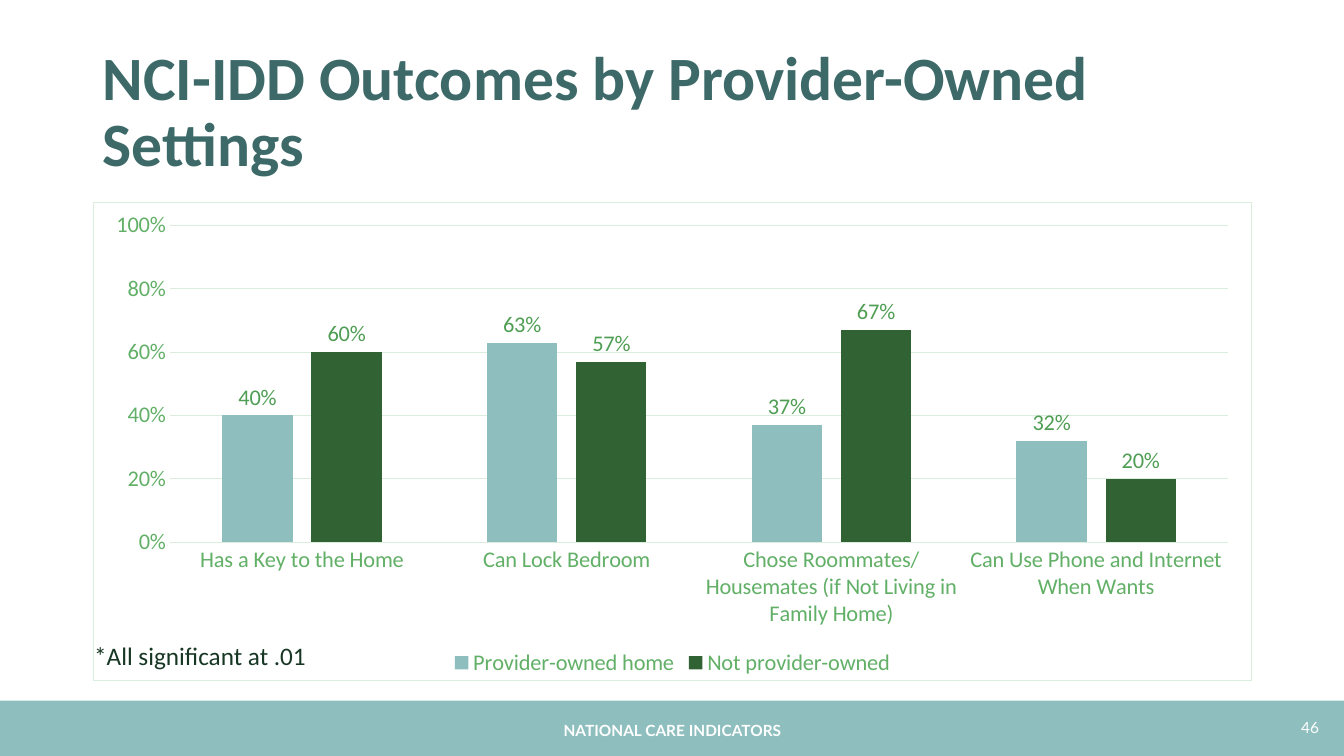
from dataclasses import dataclass

import lxml.etree
import pptx
import pptx.chart.data
import pptx.dml.color
import pptx.enum.chart
import pptx.enum.shapes
import pptx.enum.text
import pptx.oxml
import pptx.oxml.ns
import pptx.util

ALIGN = pptx.enum.text.PP_ALIGN
ANCHOR = pptx.enum.text.MSO_ANCHOR
WIDTH, HEIGHT = pptx.util.Inches(13.33), pptx.util.Inches(7.5)


@dataclass(frozen=True)
class Theme:
    teal: str = "8EBEBE"
    dark_teal: str = "3D6969"
    dark_green: str = "316234"
    label_green: str = "4F9E54"
    axis_green: str = "62B067"
    pale_green: str = "DBEDDC"
    ink: str = "173724"
    white: str = "FFFFFF"
    body_font: str = "Calibri"
    footer_font: str = "Lato"
    title_size: float = 44
    note_size: float = 18
    chart_size: float = 16
    footer_size: float = 11
    hairline: float = 0.75


THEME = Theme()


@dataclass(frozen=True)
class Area:
    """A rectangle in percent of the slide's width and height."""
    left: float
    top: float
    width: float
    height: float

    def box(self) -> tuple[int, int, int, int]:
        return (int(WIDTH * self.left / 100), int(HEIGHT * self.top / 100),
                int(WIDTH * self.width / 100), int(HEIGHT * self.height / 100))


@dataclass(frozen=True)
class Label:
    text: str
    area: Area
    align: ALIGN
    size: float
    font: str
    color: str
    bold: bool = False
    wrap: bool = True


@dataclass(frozen=True)
class Series:
    name: str
    values: tuple[float, ...]
    color: str


TITLE = "NCI-IDD Outcomes by Provider-Owned Settings"
TITLE_AREA = Area(6.9, 5.33, 86.27, 19.33)
CHART_AREA = Area(6.9, 26.67, 86.27, 63.47)
BAND_AREA = Area(0, 92.67, 100, 7.33)

CATEGORIES = (
    "Has a Key to the Home",
    "Can Lock Bedroom",
    "Chose Roommates/ Housemates (if Not Living in Family Home)",
    "Can Use Phone and Internet When Wants",
)
SERIES = (
    Series("Provider-owned home", (0.40, 0.63, 0.37, 0.32), THEME.teal),
    Series("Not provider-owned", (0.60, 0.57, 0.67, 0.20), THEME.dark_green),
)
LABELS = (
    Label("*All significant at .01", Area(6.15, 84, 17.48, 5.33), ALIGN.CENTER,
          THEME.note_size, THEME.body_font, THEME.ink, wrap=False),
    Label("46", Area(76.37, 94.27, 22.51, 5.33), ALIGN.RIGHT,
          THEME.footer_size, THEME.footer_font, THEME.white),
    Label("NATIONAL CARE INDICATORS", Area(33.16, 94.67, 33.76, 4.27), ALIGN.CENTER,
          THEME.footer_size, THEME.footer_font, THEME.white, bold=True),
)


def rgb(color: str) -> pptx.dml.color.RGBColor:
    return pptx.dml.color.RGBColor.from_string(color)


def apply(target, values: dict) -> None:
    for name, value in values.items():
        setattr(target, name, value)


def format_font(font, size: float, color: str, name: str = THEME.body_font,
                bold: bool = False) -> None:
    apply(font, {"size": pptx.util.Pt(size), "name": name, "bold": bold})
    font.color.rgb = rgb(color)


def format_line(line, color: str) -> None:
    line.color.rgb = rgb(color)
    line.width = pptx.util.Pt(THEME.hairline)


def add_band(slide) -> None:
    band = slide.shapes.add_shape(pptx.enum.shapes.MSO_SHAPE.RECTANGLE, *BAND_AREA.box())
    band.shadow.inherit = False
    band.fill.solid()
    band.fill.fore_color.rgb = rgb(THEME.teal)
    band.line.fill.background()


def set_title(slide) -> None:
    title = slide.shapes.title
    apply(title, dict(zip(("left", "top", "width", "height"), TITLE_AREA.box())))
    frame = title.text_frame
    frame.text = TITLE
    apply(frame, {"word_wrap": True, "vertical_anchor": ANCHOR.MIDDLE,
                  "auto_size": pptx.enum.text.MSO_AUTO_SIZE.NONE})
    paragraph = frame.paragraphs[0]
    apply(paragraph, {"alignment": ALIGN.LEFT, "line_spacing": 0.9})
    format_font(paragraph.runs[0].font, THEME.title_size, THEME.dark_teal, bold=True)


def add_label(slide, label: Label) -> None:
    frame = slide.shapes.add_textbox(*label.area.box()).text_frame
    frame.word_wrap = label.wrap
    paragraph = frame.paragraphs[0]
    paragraph.text = label.text
    paragraph.alignment = label.align
    format_font(paragraph.runs[0].font, label.size, label.color, label.font, label.bold)


def frame_chart(chart) -> None:
    """Give the chart area a white fill and a thin border."""
    border = pptx.oxml.parse_xml(
        f'<c:spPr {pptx.oxml.ns.nsdecls("c", "a")}>'
        f'<a:solidFill><a:srgbClr val="{THEME.white}"/></a:solidFill>'
        f'<a:ln w="{pptx.util.Pt(THEME.hairline)}"><a:solidFill>'
        f'<a:srgbClr val="{THEME.pale_green}"/></a:solidFill></a:ln></c:spPr>')
    chart._chartSpace.find(pptx.oxml.ns.qn("c:chart")).addnext(border)


def format_axes(chart) -> None:
    for axis in (chart.category_axis, chart.value_axis):
        apply(axis, {"major_tick_mark": pptx.enum.chart.XL_TICK_MARK.NONE,
                     "minor_tick_mark": pptx.enum.chart.XL_TICK_MARK.NONE})
        format_font(axis.tick_labels.font, THEME.chart_size, THEME.axis_green)
    format_line(chart.category_axis.format.line, THEME.pale_green)
    values = chart.value_axis
    apply(values, {"minimum_scale": 0, "maximum_scale": 1, "major_unit": 0.2,
                   "has_major_gridlines": True})
    apply(values.tick_labels, {"number_format": "0%", "number_format_is_linked": False})
    values.format.line.fill.background()
    format_line(values.major_gridlines.format.line, THEME.pale_green)


def add_outcome_chart(slide) -> None:
    data = pptx.chart.data.CategoryChartData(number_format="0%")
    data.categories = CATEGORIES
    for series in SERIES:
        data.add_series(series.name, series.values)
    chart = slide.shapes.add_chart(pptx.enum.chart.XL_CHART_TYPE.COLUMN_CLUSTERED,
                                   *CHART_AREA.box(), data).chart
    format_font(chart.font, THEME.chart_size, THEME.dark_green)
    apply(chart, {"has_title": False, "has_legend": True})
    apply(chart.legend, {"position": pptx.enum.chart.XL_LEGEND_POSITION.BOTTOM,
                         "include_in_layout": False})
    format_font(chart.legend.font, THEME.chart_size, THEME.axis_green)
    format_axes(chart)

    # Columns and their value labels
    plot = chart.plots[0]
    apply(plot, {"gap_width": 150, "overlap": -27, "vary_by_categories": False})
    for series, column in zip(SERIES, plot.series):
        column.format.fill.solid()
        column.format.fill.fore_color.rgb = rgb(series.color)
        labels = column.data_labels
        apply(labels, {"show_value": True, "number_format": "0%",
                       "number_format_is_linked": False,
                       "position": pptx.enum.chart.XL_LABEL_POSITION.OUTSIDE_END})
        format_font(labels.font, THEME.chart_size, THEME.label_green)
    frame_chart(chart)


def main() -> None:
    presentation = pptx.Presentation()
    apply(presentation, {"slide_width": WIDTH, "slide_height": HEIGHT})
    slide = presentation.slides.add_slide(presentation.slide_layouts.get_by_name("Title Only"))
    add_band(slide)
    set_title(slide)
    add_outcome_chart(slide)
    # Note, slide number and footer
    for label in LABELS:
        add_label(slide, label)
    presentation.save("out.pptx")


if __name__ == "__main__":
    main()
